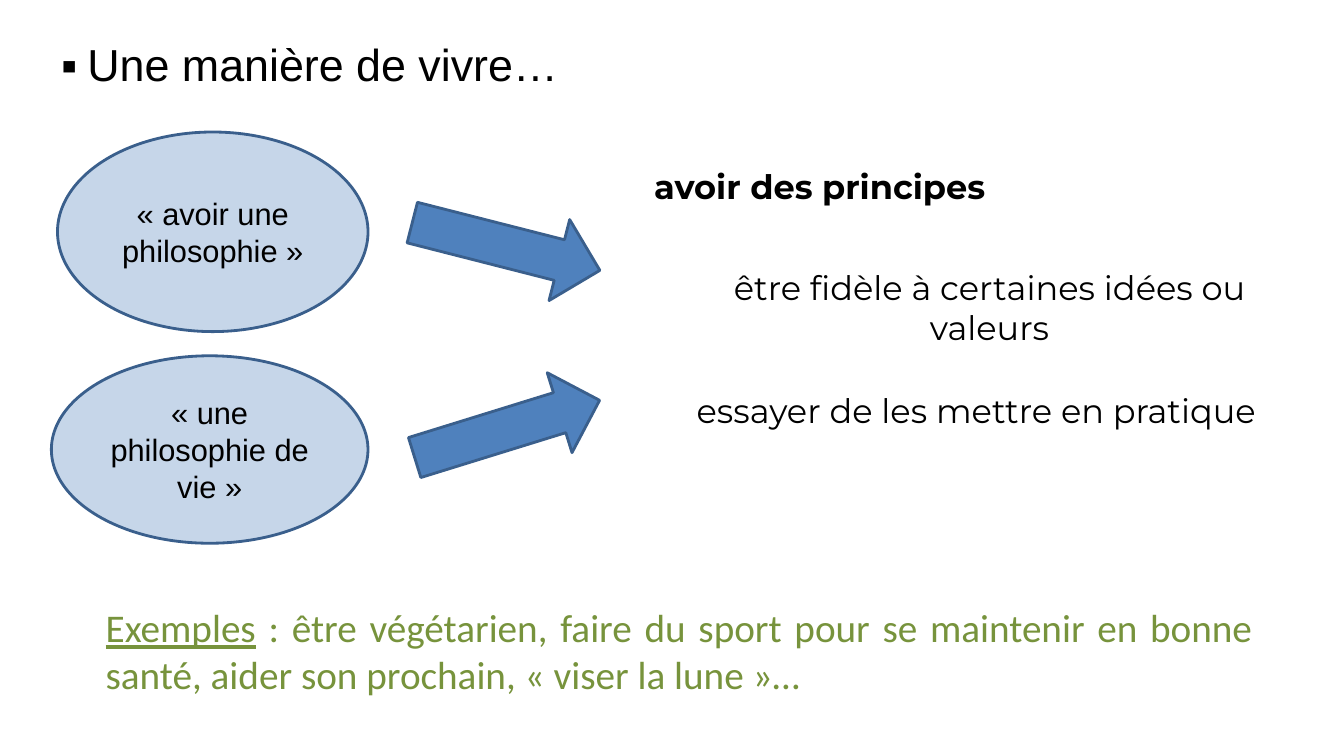
import pptx
import pptx.dml.color
import pptx.enum.shapes
import pptx.enum.text
import pptx.oxml.ns
import pptx.util
from lxml import etree

Inches = pptx.util.Inches
Pt = pptx.util.Pt
RGBColor = pptx.dml.color.RGBColor
Align = pptx.enum.text.PP_ALIGN
Shape = pptx.enum.shapes.MSO_SHAPE
qn = pptx.oxml.ns.qn

BLACK = RGBColor(0x00, 0x00, 0x00)
BLUE = RGBColor(0x4F, 0x81, 0xBD)
DARK_BLUE = RGBColor(0x3A, 0x5F, 0x8C)
GREEN = RGBColor(0x77, 0x93, 0x3C)


class SlideBuilder:
    def __init__(self, slide):
        self.shapes = slide.shapes

    def add_words(self, paragraph, words, size, font, color=BLACK, bold=False, underline=False):
        run = paragraph.add_run()
        run.text = words
        run.font.size = Pt(size)
        run.font.name = font
        run.font.color.rgb = color
        run.font.bold = bold
        run.font.underline = underline

    def text_box(self, box, align, wrap=True):
        """Add a box that grows with its text and return its paragraph."""
        frame = self.shapes.add_textbox(*map(Inches, box)).text_frame
        frame.word_wrap = wrap
        frame.auto_size = pptx.enum.text.MSO_AUTO_SIZE.SHAPE_TO_FIT_TEXT
        frame.paragraphs[0].alignment = align
        return frame.paragraphs[0]

    def outlined(self, kind, box):
        shape = self.shapes.add_shape(kind, *map(Inches, box))
        shape.shadow.inherit = False
        shape.fill.solid()
        shape.fill.fore_color.rgb = BLUE
        shape.line.color.rgb = DARK_BLUE
        shape.line.width = Pt(2)
        return shape

    def expression(self, box, words):
        """Add a translucent ellipse holding a quoted expression."""
        ellipse = self.outlined(Shape.OVAL, box)
        color = ellipse.element.spPr.find(qn("a:solidFill"))[0]
        etree.SubElement(color, qn("a:alpha")).set("val", "32000")
        frame = ellipse.text_frame
        frame.word_wrap = True
        frame.vertical_anchor = pptx.enum.text.MSO_ANCHOR.MIDDLE
        frame.paragraphs[0].alignment = Align.CENTER
        self.add_words(frame.paragraphs[0], words, 22, "Arial")

    def arrow(self, left, top, rotation):
        self.outlined(Shape.LEFT_ARROW, (left, top, 1.92, 0.83)).rotation = rotation

    def idea(self, box, words, align=Align.CENTER, wrap=True, bold=False):
        self.add_words(self.text_box(box, align, wrap), words, 24, "Montserrat", bold=bold)


def main():
    deck = pptx.Presentation()
    deck.slide_width = Inches(13.33)
    deck.slide_height = Inches(7.5)
    builder = SlideBuilder(deck.slides.add_slide(deck.slide_layouts[6]))

    heading = builder.text_box((0.51, 0.32, 12.14, 0.64), Align.JUSTIFY)
    builder.add_words(heading, "▪ ", 32, "Calibri")
    builder.add_words(heading, "Une manière de vivre…", 32, "Arial")

    builder.expression((0.57, 1.31, 3.08, 1.98), "« avoir une philosophie »")
    builder.expression((0.51, 3.53, 3.14, 1.86), "« une philosophie de vie »")
    builder.arrow(4.06, 2.03, 194.3)
    builder.arrow(4.07, 3.84, 162.8)

    builder.idea((6.39, 1.6, 3.68, 0.5), "avoir des principes",
                 Align.LEFT, wrap=False, bold=True)
    builder.idea((6.98, 2.6, 5.67, 0.91), "être fidèle à certaines idées ou valeurs")
    builder.idea((6.39, 3.82, 6.67, 0.5), "essayer de les mettre en pratique ")

    examples = builder.text_box((0.95, 5.94, 11.57, 1.04), Align.JUSTIFY)
    builder.add_words(examples, "Exemples", 28, "Calibri", GREEN, underline=True)
    builder.add_words(examples, " : être végétarien, faire du sport pour se maintenir en bonne "
                      "santé, aider son prochain, « viser la lune »…", 28, "Calibri", GREEN)

    deck.save("out.pptx")


if __name__ == "__main__":
    main()
